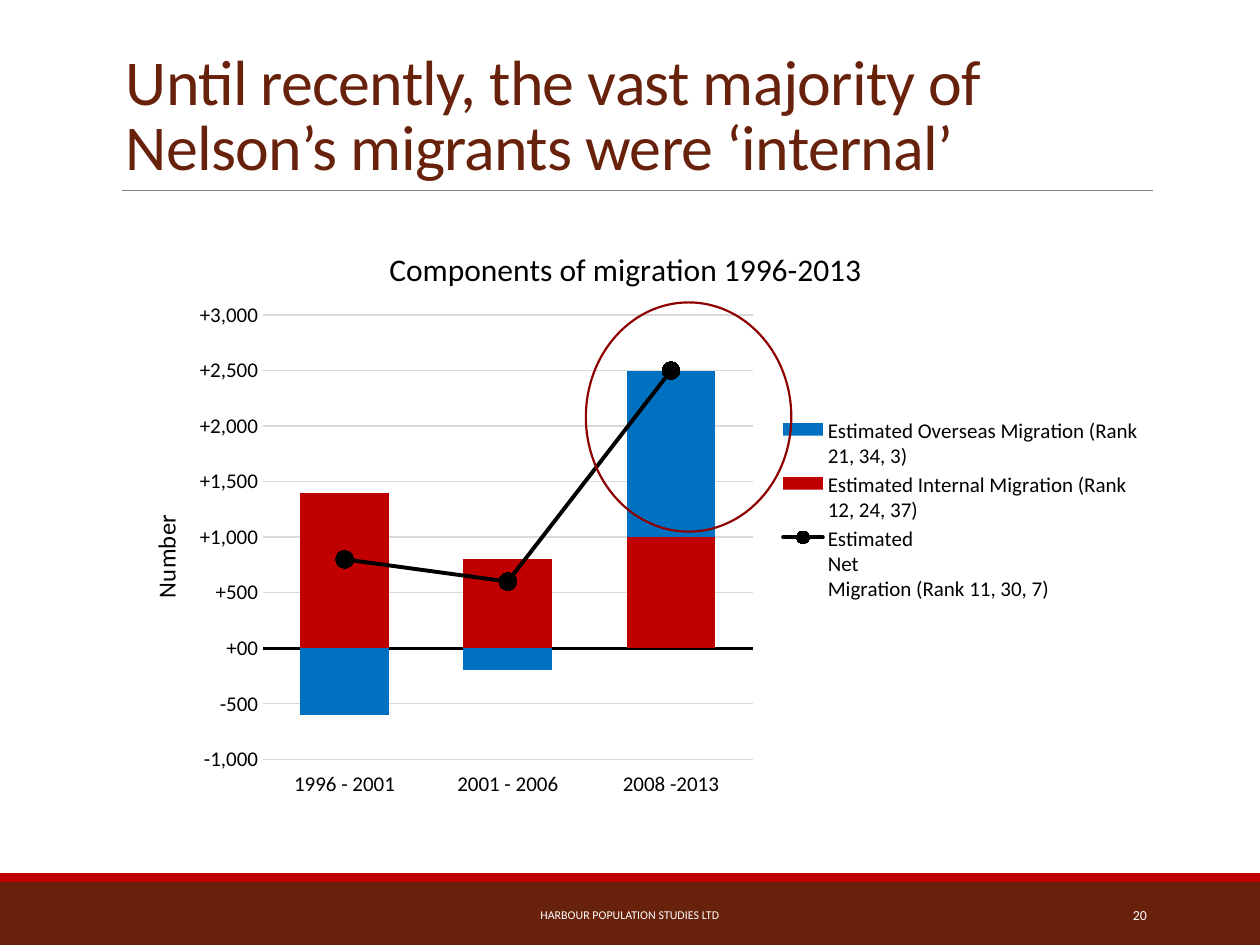
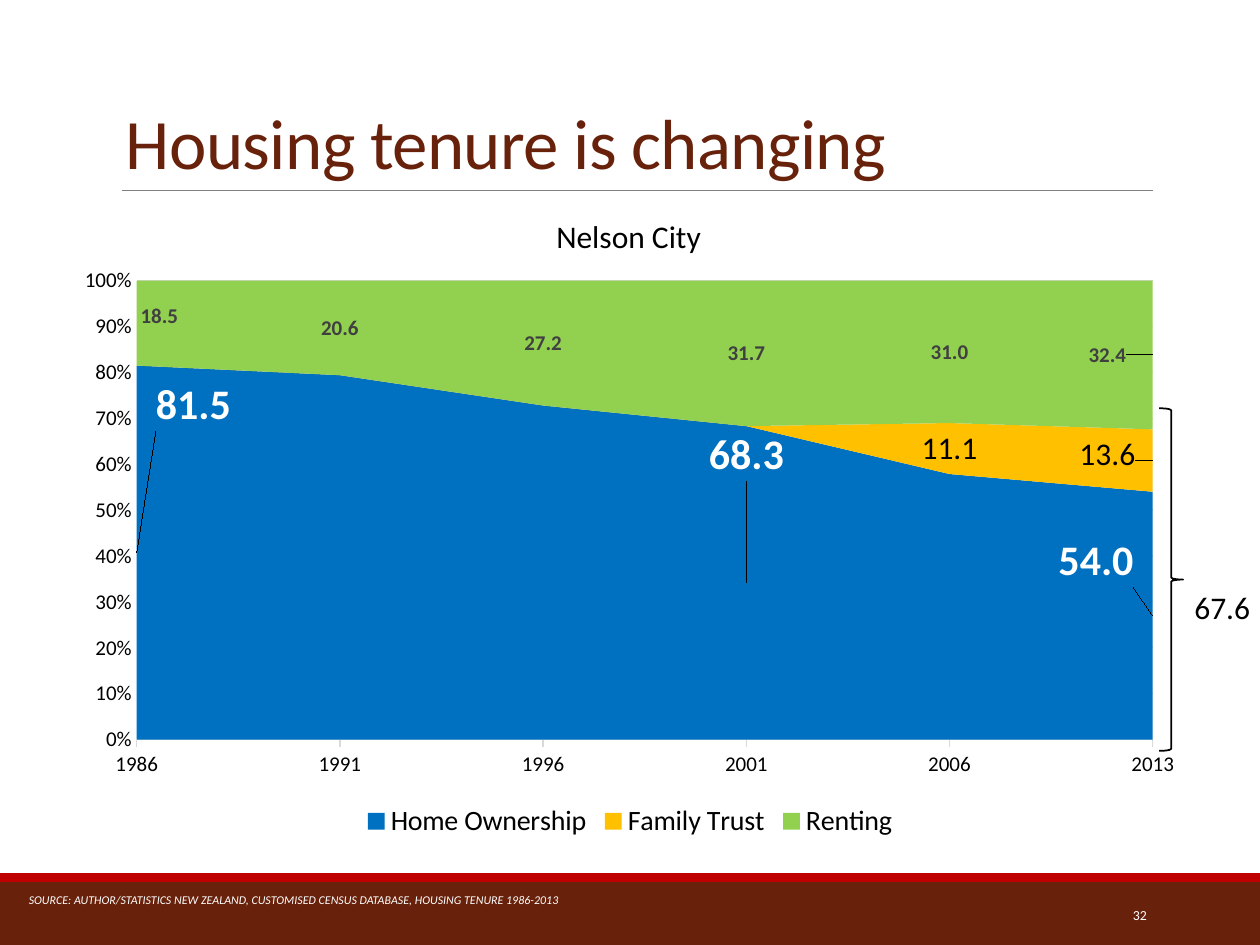
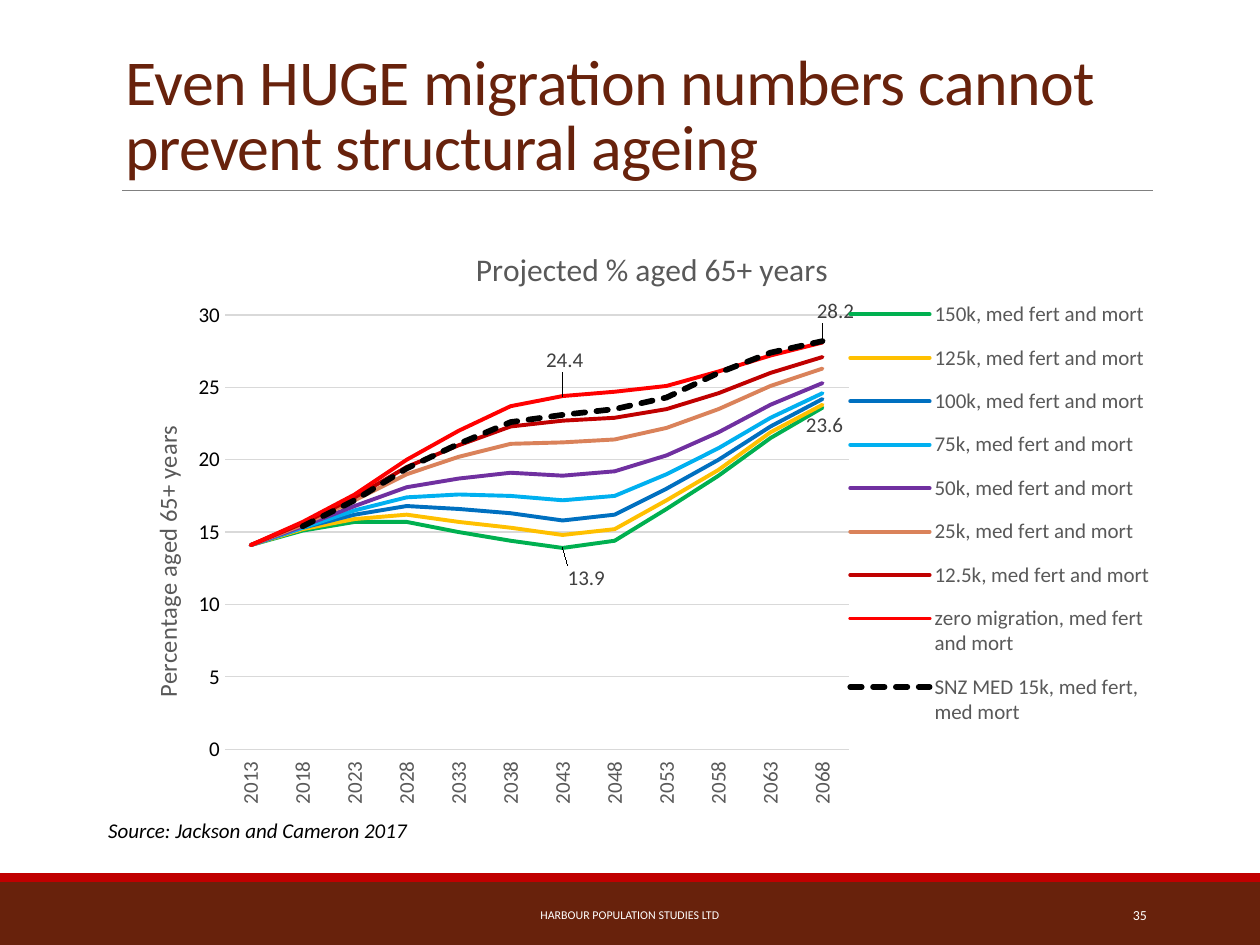
import pptx
import pptx.chart.data
import pptx.dml.color
import pptx.enum.chart
import pptx.enum.dml
import pptx.enum.shapes
import pptx.enum.text
import pptx.oxml
import pptx.oxml.ns
import pptx.util

Pt = pptx.util.Pt
qn = pptx.oxml.ns.qn
NS = pptx.oxml.ns.nsdecls("c")
TYPE = pptx.enum.chart.XL_CHART_TYPE
TICK = pptx.enum.chart.XL_TICK_MARK
LEGEND = pptx.enum.chart.XL_LEGEND_POSITION
SHAPE = pptx.enum.shapes.MSO_SHAPE
ALIGN = pptx.enum.text.PP_ALIGN
ANCHOR = pptx.enum.text.MSO_ANCHOR

FONT = "Calibri"
COMPANY = "HARBOUR POPULATION STUDIES LTD"
UPRIGHT = "-5400000"
COLORS = {
    "brown": "68220C", "red": "C00000", "rule": "808080", "ring": "8E0000",
    "black": "000000", "white": "FFFFFF", "grid": "D9D9D9", "grey": "595959",
    "label": "404040", "blue": "0070C0", "amber": "FFC000", "lime": "92D050",
    "green": "00B050", "sky": "00B0F0", "purple": "7030A0", "tan": "DA825A",
    "bright red": "FF0000",
}


def rgb(name):
    return pptx.dml.color.RGBColor.from_string(COLORS[name])


def set_font(font, size, color="black", bold=False, italic=False):
    font.name, font.size, font.bold, font.italic = FONT, Pt(size), bold, italic
    font.color.rgb = rgb(color)


def set_fill(fill, color):
    fill.solid()
    fill.fore_color.rgb = rgb(color)


def set_line(line, color, width):
    line.color.rgb = rgb(color)
    line.width = Pt(width)


def place(el, x, y, w=None, h=None, after=None, target="", edge=True):
    """Give a chart part a manual layout, in fractions of the chart."""
    for old in el.findall(qn("c:layout")):
        el.remove(old)
    parts = [("layoutTarget", target)] if target else []
    if edge:
        parts += [("xMode", "edge"), ("yMode", "edge")]
    parts += [("x", x), ("y", y)]
    if w is not None:
        parts += [("w", w), ("h", h)]
    body = "".join(f'<c:{tag} val="{val}"/>' for tag, val in parts)
    layout = pptx.oxml.parse_xml(
        f"<c:layout {NS}><c:manualLayout>{body}</c:manualLayout></c:layout>")
    if after:
        el.find(qn(after)).addnext(layout)
    else:
        el.insert(0, layout)
    return layout


def move_last_to_line(chart):
    """Turn the last bar series into a line on the same axes."""
    bar = chart._chartSpace.xpath(".//c:barChart")[0]
    ser = bar.findall(qn("c:ser"))[-1]
    for el in ser.findall(qn("c:invertIfNegative")):
        ser.remove(el)
    ids = "".join(f'<c:axId val="{el.get("val")}"/>' for el in bar.findall(qn("c:axId")))
    line = pptx.oxml.parse_xml(
        f'<c:lineChart {NS}><c:grouping val="standard"/><c:varyColors val="0"/>'
        f'<c:marker val="1"/>{ids}</c:lineChart>')
    line.insert(2, ser)
    bar.addnext(line)
    return chart.plots[1].series[0]


class Deck:
    def __init__(self):
        self.prs = pptx.Presentation()
        self.prs.slide_width, self.prs.slide_height = Pt(720), Pt(540)
        self.s = None

    def slide(self, title, number, size=36.5):
        """Start a slide with its bands, title rule, title and page number."""
        self.s = self.prs.slides.add_slide(self.prs.slide_layouts[6])
        self.shape(SHAPE.RECTANGLE, 0, 504, 720, 36, fill="brown")
        self.shape(SHAPE.RECTANGLE, 0, 499, 720, 5, fill="red")
        self.rule(69.8, 108.7, 658.8)
        p = self.text(title, 64.8, 22.3, 570.2, 86.4, size, "brown", anchor=ANCHOR.BOTTOM)
        p.line_spacing = 0.85
        p.runs[0]._r.get_or_add_rPr().set("spc", "-40")
        self.footer(str(number), 584.6, 508.3, 77.8, 7.9, align=ALIGN.RIGHT)

    def shape(self, kind, x, y, w, h, fill=None, line=None, width=1):
        sp = self.s.shapes.add_shape(kind, Pt(x), Pt(y), Pt(w), Pt(h))
        sp.shadow.inherit = False
        if fill:
            set_fill(sp.fill, fill)
        else:
            sp.fill.background()
        if line:
            set_line(sp.line, line, width)
        else:
            sp.line.fill.background()

    def rule(self, x1, y, x2):
        line = self.s.shapes.add_connector(
            pptx.enum.shapes.MSO_CONNECTOR.STRAIGHT, Pt(x1), Pt(y), Pt(x2), Pt(y))
        set_line(line.line, "rule", 0.5)
        line._element.spPr.append(pptx.oxml.parse_xml(
            f'<a:effectLst {pptx.oxml.ns.nsdecls("a")}/>'))

    def text(self, text, x, y, w, h, size, color="black", italic=False,
             align=ALIGN.LEFT, anchor=ANCHOR.TOP):
        tf = self.s.shapes.add_textbox(Pt(x), Pt(y), Pt(w), Pt(h)).text_frame
        tf.word_wrap = True
        tf.vertical_anchor = anchor
        p = tf.paragraphs[0]
        p.add_run().text = text
        p.alignment = align
        set_font(p.font, size, color, italic=italic)
        return p

    def footer(self, text, x, y, w, size=6.8, **style):
        self.text(text, x, y, w, 28.8, size, "white", anchor=ANCHOR.MIDDLE, **style)

    def company(self):
        self.footer(COMPANY, 217.4, 508.3, 285.1, align=ALIGN.CENTER)

    def chart(self, kind, box, cats, rows, title, title_at, plot_at, color="black"):
        """Add a chart; rows are (name, colour, values)."""
        data = pptx.chart.data.CategoryChartData()
        data.categories = cats
        for name, _, values in rows:
            data.add_series(name, values)
        chart = self.s.shapes.add_chart(kind, *map(Pt, box), data).chart
        set_font(chart.font, 10)
        chart.plots[0].vary_by_categories = False
        p = chart.chart_title.text_frame.paragraphs[0]
        p.add_run().text = title
        set_font(p.font, 18, color)
        place(chart.chart_title._element, *title_at, after="c:tx")
        place(chart._chartSpace.xpath("c:chart/c:plotArea")[0], *plot_at, target="inner")
        return chart

    def axes(self, chart, scale, fmt="General", cat_color="black", line="grid",
             width=0.75, tick=TICK.NONE):
        """Style both axes; scale is (minimum, maximum, step)."""
        cat, val = chart.category_axis, chart.value_axis
        for axis, color in ((cat, cat_color), (val, "black")):
            set_font(axis.tick_labels.font, 12, color)
            axis.minor_tick_mark = TICK.NONE
        cat.major_tick_mark, val.major_tick_mark = tick, TICK.NONE
        cat.tick_label_position = pptx.enum.chart.XL_TICK_LABEL_POSITION.LOW
        set_line(cat.format.line, line, width)
        val.format.line.fill.background()
        val.has_major_gridlines = True
        set_line(val.major_gridlines.format.line, "grid", 0.75)
        val.tick_labels.number_format = fmt
        val.tick_labels.number_format_is_linked = False
        val.minimum_scale, val.maximum_scale, val.major_unit = scale

    def value_title(self, chart, text, x, y, color="black"):
        title = chart.value_axis.axis_title
        p = title.text_frame.paragraphs[0]
        p.add_run().text = text
        set_font(p.font, 14, color)
        title.text_frame._txBody.bodyPr.set("rot", UPRIGHT)
        place(title._element, x, y, after="c:tx")

    def legend(self, chart, size=12, color="black", at=None, position=LEGEND.RIGHT):
        chart.has_legend = True
        chart.legend.position = position
        chart.legend.include_in_layout = False
        set_font(chart.legend.font, size, color)
        if at:
            place(chart.legend._element, *at, after="c:legendPos")

    def line_series(self, ser, color, width=2.25):
        ser.smooth = False
        set_line(ser.format.line, color, width)
        ser._element.xpath("c:spPr/a:ln")[0].set("cap", "rnd")

    def labels(self, ser, offsets, size, color, bold=False, leaders=False):
        """Label chosen points; offsets maps a point to its shift from the usual place."""
        ser.data_labels.show_value = False
        for i, shift in offsets.items():
            set_font(ser.points[i].data_label.font, size, color, bold)
            dlbl = ser._element.xpath(f"c:dLbls/c:dLbl[c:idx/@val='{i}']")[0]
            layout = place(dlbl, *shift, after="c:idx", edge=False)
            layout.addnext(pptx.oxml.parse_xml(
                f'<c:numFmt {NS} formatCode="#,##0.0" sourceLinked="0"/>'))
        dlbls = ser._element.find(qn("c:dLbls"))
        for el in dlbls.findall(qn("c:showLeaderLines")):
            dlbls.remove(el)
        dlbls.append(pptx.oxml.parse_xml(
            f'<c:extLst {NS}><c:ext uri="{{CE6537A1-D6FC-4f65-9D91-7224C49458BB}}" '
            'xmlns:c15="http://schemas.microsoft.com/office/drawing/2012/chart">'
            f'<c15:showLeaderLines val="{int(leaders)}"/></c:ext></c:extLst>'))


def migration_slide(deck):
    deck.slide("Until recently, the vast majority of Nelson’s migrants were ‘internal’", 20)
    rows = [
        ("Estimated Internal Migration (Rank 12, 24, 37)", "red", (1400, 800, 1000)),
        ("Estimated Overseas Migration (Rank 21, 34, 3)", "blue", (-600, -200, 1500)),
        ("Estimated \nNet \nMigration (Rank 11, 30, 7)", "black", (800, 600, 2500)),
    ]
    chart = deck.chart(TYPE.COLUMN_STACKED, (64.8, 121, 594, 341.3),
                       ("1996 - 2001", "2001 - 2006", "2008 -2013"), rows,
                       "Components of migration 1996-2013", (0.26, 0.05),
                       (0.144, 0.173, 0.471, 0.744))
    deck.axes(chart, (-1000, 3000, 500), r"\+#,#00;\-#,#00", line="black", width=1.5)
    deck.value_title(chart, "Number", 0.03, 0.5)
    deck.legend(chart, at=(0.64, 0.34, 0.35, 0.32))
    net = move_last_to_line(chart)
    bars = chart.plots[0]
    bars.gap_width, bars.overlap = 84, 100
    for ser, (_, color, _) in zip(bars.series, rows):
        set_fill(ser.format.fill, color)
    deck.line_series(net, "black")
    net.marker.style = pptx.enum.chart.XL_MARKER_STYLE.CIRCLE
    net.marker.size = 10
    set_fill(net.marker.format.fill, "black")
    set_line(net.marker.format.line, "black", 0.75)
    deck.company()
    deck.shape(SHAPE.OVAL, 334.8, 172.8, 117.4, 131, line="ring", width=1.25)


def tenure_slide(deck):
    deck.slide("Housing tenure is changing", 32, 40.5)
    rows = [
        ("Home Ownership", "blue", (81.5, 79.4, 72.8, 68.3, 57.8, 54)),
        ("Family Trust", "amber", (None, None, None, None, 11.1, 13.6)),
        ("Renting", "lime", (18.5, 20.6, 27.2, 31.7, 31, 32.4)),
    ]
    labels = [
        ({0: (0.05, -0.22), 3: (0, -0.19), 5: (-0.05, -0.08)}, 24, "white", True),
        ({4: (0, 0), 5: (-0.04, -0.01)}, 18, "black", False),
        ({0: (0.02, -0.01), 1: (0, 0), 2: (0, 0), 3: (0, 0), 4: (0, 0), 5: (-0.04, 0)},
         12, "label", True),
    ]
    chart = deck.chart(TYPE.AREA_STACKED_100, (36, 100, 648, 382.3),
                       ("1986", "1991", "1996", "2001", "2006", "2013"), rows,
                       "Nelson City", (0.43, 0.05), (0.065, 0.158, 0.896, 0.686))
    deck.axes(chart, (0, 1, 0.1), "0%", tick=TICK.OUTSIDE)
    for el in chart._chartSpace.xpath(".//c:valAx/c:crossBetween"):
        el.set("val", "midCat")
    for el in chart._chartSpace.xpath("c:chart/c:dispBlanksAs"):
        el.set("val", "zero")
    deck.legend(chart, 16, position=LEGEND.BOTTOM)
    for ser, (_, color, _), label in zip(chart.plots[0].series, rows, labels):
        set_fill(ser.format.fill, color)
        deck.labels(ser, *label)
    deck.shape(SHAPE.RIGHT_BRACE, 662.4, 233.3, 13.7, 195.8, line="black")
    deck.text("67.6", 675.4, 332.6, 48.2, 46, 18)
    deck.footer("SOURCE: AUTHOR/STATISTICS NEW ZEALAND, CUSTOMISED CENSUS DATABASE, "
                "HOUSING TENURE 1986-2013", 9.4, 499.7, 499, italic=True)


def ageing_slide(deck):
    deck.slide("Even HUGE migration numbers cannot prevent structural ageing", 35)
    suffix = ", med fert and mort"
    rows = [
        ("150k" + suffix, "green",
         (14.1, 15.1, 15.7, 15.7, 15, 14.4, 13.9, 14.4, 16.6, 18.9, 21.5, 23.6)),
        ("125k" + suffix, "amber",
         (14.1, 15.2, 15.9, 16.2, 15.7, 15.3, 14.8, 15.2, 17.2, 19.3, 21.9, 23.8)),
        ("100k" + suffix, "blue",
         (14.1, 15.3, 16.2, 16.8, 16.6, 16.3, 15.8, 16.2, 18, 20, 22.3, 24.2)),
        ("75k" + suffix, "sky",
         (14.1, 15.3, 16.5, 17.4, 17.6, 17.5, 17.2, 17.5, 19, 20.8, 22.9, 24.6)),
        ("50k" + suffix, "purple",
         (14.1, 15.4, 16.8, 18.1, 18.7, 19.1, 18.9, 19.2, 20.3, 21.9, 23.8, 25.3)),
        ("25k" + suffix, "tan",
         (14.1, 15.5, 17.2, 19, 20.2, 21.1, 21.2, 21.4, 22.2, 23.5, 25.1, 26.3)),
        ("12.5k" + suffix, "red",
         (14.1, 15.6, 17.4, 19.5, 21, 22.3, 22.7, 22.9, 23.5, 24.6, 26, 27.1)),
        ("zero migration" + suffix, "bright red",
         (14.1, 15.7, 17.6, 20, 22, 23.7, 24.4, 24.7, 25.1, 26.1, 27.2, 28.1)),
        ("SNZ MED 15k, med fert, med mort", "black",
         (None, 15.4, 17.2, 19.4, 21.1, 22.6, 23.1, 23.5, 24.3, 26, 27.4, 28.2)),
    ]
    chart = deck.chart(TYPE.LINE, (64.8, 121, 617.8, 341.3),
                       [str(year) for year in range(2013, 2069, 5)], rows,
                       "Projected % aged 65+ years", (0.33, 0.05),
                       (0.103, 0.173, 0.577, 0.727), "grey")
    deck.axes(chart, (0, 30, 5), cat_color="grey")
    chart.category_axis._element.xpath("c:txPr/a:bodyPr")[0].set("rot", UPRIGHT)
    deck.value_title(chart, "Percentage aged 65+ years", 0.03, 0.35, "grey")
    deck.legend(chart, color="grey", at=(0.67, 0.12, 0.3, 0.77))
    lines = chart.plots[0].series
    for ser, (_, color, _) in zip(lines, rows):
        deck.line_series(ser, color)
    official = lines[8].format.line
    official.width = Pt(3.25)
    official.dash_style = pptx.enum.dml.MSO_LINE.SQUARE_DOT
    offsets = {0: {6: (0, 0.05), 11: (-0.02, 0.03)}, 7: {6: (-0.02, -0.06)},
               8: {11: (-0.01, -0.05)}}
    for i, shifts in offsets.items():
        deck.labels(lines[i], shifts, 12, "label", leaders=True)
    deck.company()
    deck.text("Source: Jackson and Cameron 2017", 54.7, 463.7, 226, 21.6, 12, italic=True)


def main():
    deck = Deck()
    migration_slide(deck)
    tenure_slide(deck)
    ageing_slide(deck)
    deck.prs.save("out.pptx")


if __name__ == "__main__":
    main()
